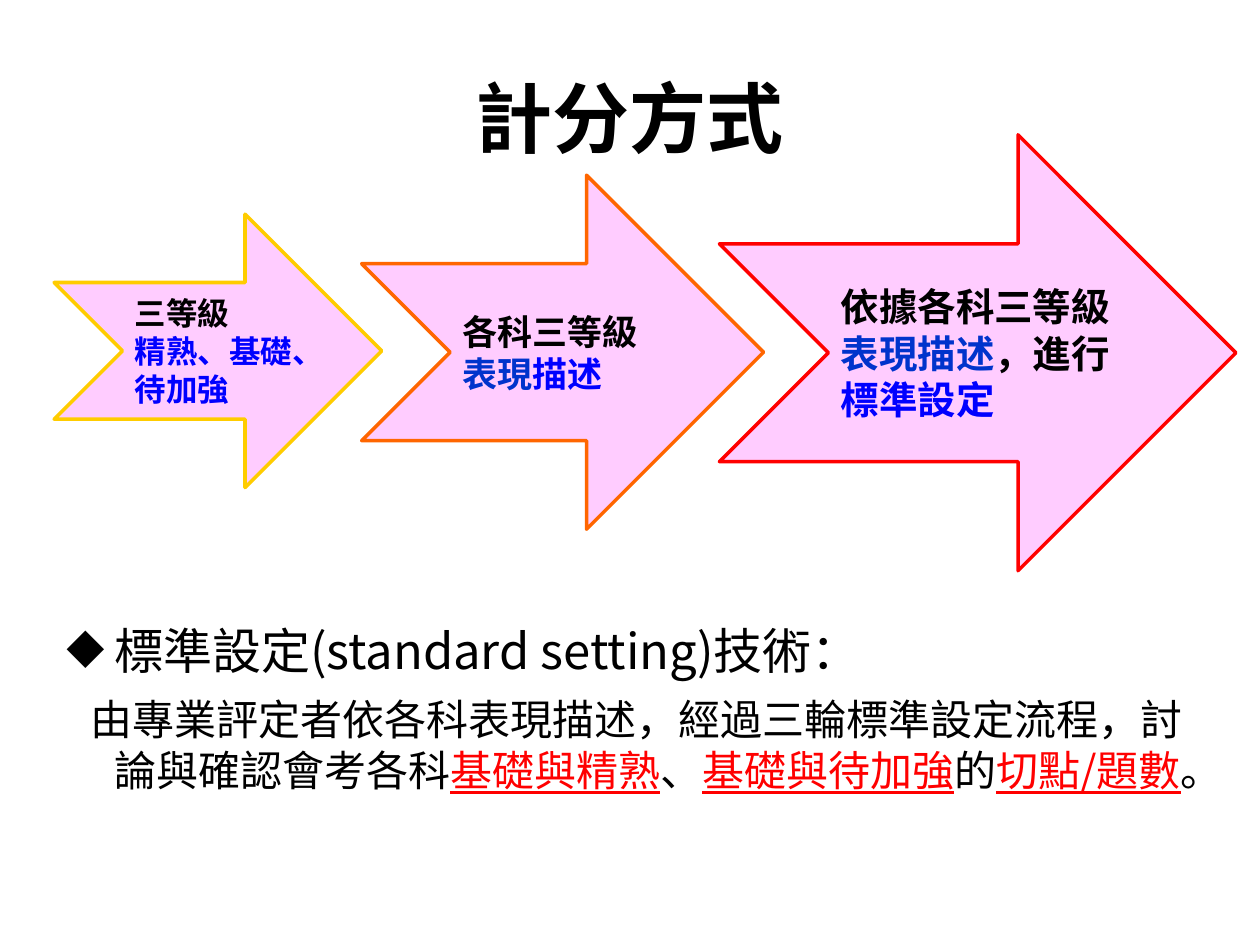
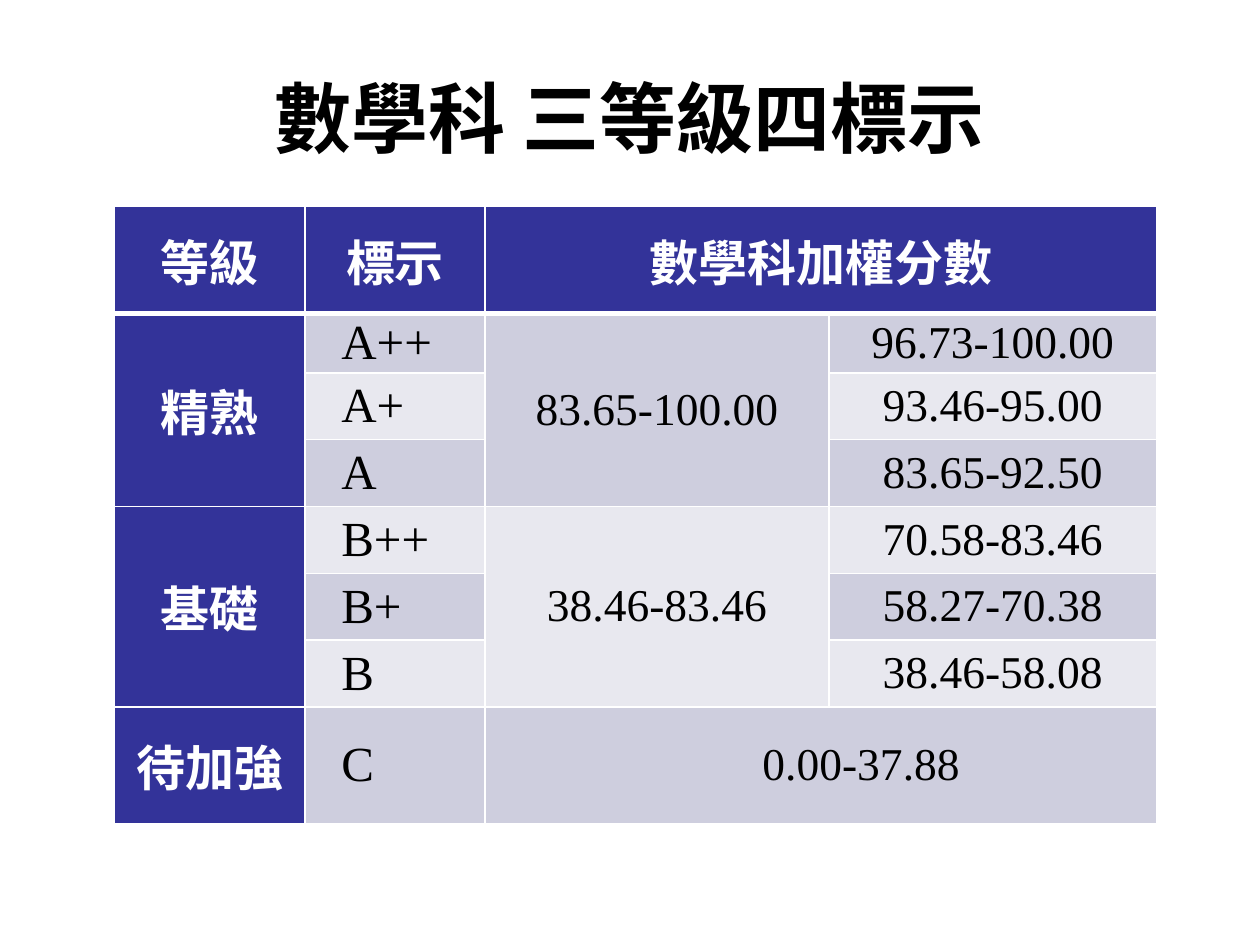
import dataclasses
import typing

import pptx
import pptx.dml.color
import pptx.enum.shapes
import pptx.enum.text
import pptx.oxml.ns
import pptx.util
from lxml import etree

Inches = pptx.util.Inches
Pt = pptx.util.Pt
RGBColor = pptx.dml.color.RGBColor
Align = pptx.enum.text.PP_ALIGN
Anchor = pptx.enum.text.MSO_ANCHOR

BLACK = RGBColor(0x00, 0x00, 0x00)
WHITE = RGBColor(0xFF, 0xFF, 0xFF)
BLUE = RGBColor(0x00, 0x00, 0xFF)
ROYAL = RGBColor(0x00, 0x33, 0xCC)
RED = RGBColor(0xFF, 0x00, 0x00)
ORANGE = RGBColor(0xFF, 0x66, 0x00)
GOLD = RGBColor(0xFF, 0xCC, 0x00)
PINK = RGBColor(0xFF, 0xCC, 0xFF)
NAVY = RGBColor(0x33, 0x33, 0x99)
BAND_DARK = RGBColor(0xCE, 0xCE, 0xDE)
BAND_LIGHT = RGBColor(0xE8, 0xE8, 0xEF)

CJK_FONT = "Noto Sans CJK SC"
HEADING_FONT = "Arial"
SCORE_FONT = "Times New Roman"
LINE_RATIO = 1.2


@dataclasses.dataclass(frozen=True)
class Span:
    text: str
    color: RGBColor = BLACK
    underline: bool = False


@dataclasses.dataclass(frozen=True)
class Style:
    size: int
    bold: bool = False
    font: str = CJK_FONT


@dataclasses.dataclass(frozen=True)
class Arrow:
    left: float
    top: float
    width: float
    height: float
    line: RGBColor
    size: int
    lines: tuple[tuple[Span, ...], ...]


@dataclasses.dataclass(frozen=True)
class Entry:
    row: int
    column: int
    text: str
    rows: int = 1
    columns: int = 1
    inset: float = 0.02


TITLE_STYLE = Style(44, True)
HEADING_STYLE = Style(28, True, HEADING_FONT)
LABEL_STYLE = Style(28, font=SCORE_FONT)
SCORE_STYLE = Style(26, font=SCORE_FONT)

ARROWS = (
    Arrow(0.43, 1.7, 2.6, 2.17, GOLD, 18, (
        (Span("三等級"),),
        (Span("精熟、基礎、待加強", BLUE),),
    )),
    Arrow(2.87, 1.39, 3.19, 2.81, ORANGE, 20, (
        (Span("各科三等級"),),
        (Span("表現", ROYAL), Span("描述", BLUE)),
    )),
    Arrow(5.71, 1.07, 4.1, 3.46, RED, 22, (
        (Span("依據各科三等級"), Span("表現描述", ROYAL), Span("，進行"), Span("標準設定", BLUE)),
    )),
)

TECHNIQUE = (Span("標準設定(standard setting)技術："),)
PROCEDURE = (
    Span("由專業評定者依各科表現描述，經過三輪標準設定流程，討論與確認會考各科"),
    Span("基礎與精熟", RED, True),
    Span("、"),
    Span("基礎與待加強", RED, True),
    Span("的"),
    Span("切點/題數", RED, True),
    Span("。"),
)

COLUMN_WIDTHS = (1.51, 1.43, 2.73, 2.6)
ROW_HEIGHTS = (0.85, 0.47, 0.53, 0.53, 0.53, 0.53, 0.53, 0.93)
LABELS = ("A++", "A+", "A", "B++", "B+", "B", "C")
LABEL_SCORES = ("96.73-100.00", "93.46-95.00", "83.65-92.50",
                "70.58-83.46", "58.27-70.38", "38.46-58.08")
HEADINGS = (
    Entry(0, 0, "等級"),
    Entry(0, 1, "標示"),
    Entry(0, 2, "數學科加權分數", columns=2),
    Entry(1, 0, "精熟", rows=3),
    Entry(4, 0, "基礎", rows=3),
    Entry(7, 0, "待加強"),
)
LEVEL_SCORES = (
    Entry(1, 2, "83.65-100.00", rows=3),
    Entry(4, 2, "38.46-83.46", rows=3),
    Entry(7, 2, "0.00-37.88", columns=2, inset=0.66),
)


def add_spans(para: typing.Any, spans: typing.Iterable[Span], style: Style) -> None:
    for span in spans:
        run = para.add_run()
        run.text = span.text
        font = run.font
        font.name = style.font
        font.size = Pt(style.size)
        font.bold = style.bold
        font.underline = span.underline
        font.color.rgb = span.color
        east_asian = etree.Element(pptx.oxml.ns.qn("a:ea"), typeface=CJK_FONT)
        run.font._element.find(pptx.oxml.ns.qn("a:latin")).addnext(east_asian)


def next_para(frame: typing.Any, index: int) -> typing.Any:
    return frame.add_paragraph() if index else frame.paragraphs[0]


def add_box(page: typing.Any, left: float, top: float, width: float, height: float) -> typing.Any:
    box = page.shapes.add_textbox(Inches(left), Inches(top), Inches(width), Inches(height))
    box.text_frame.word_wrap = True
    return box.text_frame


def add_page(deck: typing.Any, title: str) -> typing.Any:
    page = deck.slides.add_slide(deck.slide_layouts[6])
    frame = add_box(page, 0.5, 0.3, 9, 1.25)
    frame.vertical_anchor = Anchor.MIDDLE
    para = frame.paragraphs[0]
    para.alignment = Align.CENTER
    add_spans(para, (Span(title),), TITLE_STYLE)
    return page


def add_arrow(page: typing.Any, arrow: Arrow) -> None:
    shape = page.shapes.add_shape(
        pptx.enum.shapes.MSO_SHAPE.NOTCHED_RIGHT_ARROW,
        Inches(arrow.left), Inches(arrow.top), Inches(arrow.width), Inches(arrow.height))
    shape.shadow.inherit = False
    shape.fill.solid()
    shape.fill.fore_color.rgb = PINK
    shape.line.color.rgb = arrow.line
    shape.line.width = Pt(2)
    frame = shape.text_frame
    frame.word_wrap = True
    frame.vertical_anchor = Anchor.MIDDLE
    for index, spans in enumerate(arrow.lines):
        para = next_para(frame, index)
        para.alignment = Align.LEFT
        para.line_spacing = Pt(arrow.size * LINE_RATIO)
        add_spans(para, spans, Style(arrow.size, True))


def add_explanation(page: typing.Any) -> None:
    frame = add_box(page, 0.43, 4.88, 9.13, 2.37)
    contents = ((TECHNIQUE, 28, -0.38, "◆"), (PROCEDURE, 24, -0.19, None))
    for index, (spans, size, indent, bullet) in enumerate(contents):
        para = next_para(frame, index)
        properties = para._p.get_or_add_pPr()
        properties.set("marL", str(Inches(0.38)))
        properties.set("indent", str(Inches(indent)))
        if bullet:
            etree.SubElement(properties, pptx.oxml.ns.qn("a:buChar"), char=bullet)
        para.line_spacing = Pt(size * LINE_RATIO)
        if index:
            para.space_before = Pt(8)
        add_spans(para, spans, Style(size))


def set_borders(cell: typing.Any, bottom: float) -> None:
    properties = cell._tc.get_or_add_tcPr()
    widths = {"a:lnL": 1, "a:lnR": 1, "a:lnT": 1, "a:lnB": bottom}
    for index, (tag, width) in enumerate(widths.items()):
        line = etree.Element(pptx.oxml.ns.qn(tag), w=str(Pt(width)))
        fill = etree.SubElement(line, pptx.oxml.ns.qn("a:solidFill"))
        etree.SubElement(fill, pptx.oxml.ns.qn("a:srgbClr"), val=str(WHITE))
        properties.insert(index, line)


def fill_entry(table: typing.Any, entry: Entry, style: Style,
               color: RGBColor = BLACK, align: typing.Any = Align.CENTER) -> None:
    cell = table.cell(entry.row, entry.column)
    if entry.rows * entry.columns > 1:
        cell.merge(table.cell(entry.row + entry.rows - 1, entry.column + entry.columns - 1))
    cell.margin_left = Inches(entry.inset)
    cell.margin_right = Inches(0.02)
    cell.margin_top = cell.margin_bottom = 0
    cell.vertical_anchor = Anchor.MIDDLE
    para = cell.text_frame.paragraphs[0]
    para.alignment = align
    add_spans(para, (Span(entry.text, color),), style)


def add_score_table(page: typing.Any) -> None:
    table = page.shapes.add_table(
        len(ROW_HEIGHTS), len(COLUMN_WIDTHS), Inches(0.91), Inches(1.64),
        Inches(sum(COLUMN_WIDTHS)), Inches(sum(ROW_HEIGHTS))).table
    for column, width in zip(table.columns, COLUMN_WIDTHS):
        column.width = Inches(width)
    for row, height in zip(table.rows, ROW_HEIGHTS):
        row.height = Inches(height)
    for row in range(len(ROW_HEIGHTS)):
        band = BAND_DARK if row % 2 else BAND_LIGHT
        for column in range(len(COLUMN_WIDTHS)):
            cell = table.cell(row, column)
            cell.fill.solid()
            cell.fill.fore_color.rgb = NAVY if row == 0 or column == 0 else band
            set_borders(cell, 1 if row else 3)
    for entry in HEADINGS:
        fill_entry(table, entry, HEADING_STYLE, WHITE)
    for row, label in enumerate(LABELS, 1):
        fill_entry(table, Entry(row, 1, label, inset=0.29), LABEL_STYLE, align=Align.LEFT)
    for entry in LEVEL_SCORES:
        fill_entry(table, entry, SCORE_STYLE)
    for row, score in enumerate(LABEL_SCORES, 1):
        fill_entry(table, Entry(row, 3, score), SCORE_STYLE)


def main() -> None:
    deck = pptx.Presentation()
    deck.slide_width = Inches(10)
    deck.slide_height = Inches(7.5)
    page = add_page(deck, "計分方式")
    for arrow in ARROWS:
        add_arrow(page, arrow)
    add_explanation(page)
    add_score_table(add_page(deck, "數學科 三等級四標示"))
    deck.save("out.pptx")


if __name__ == "__main__":
    main()
